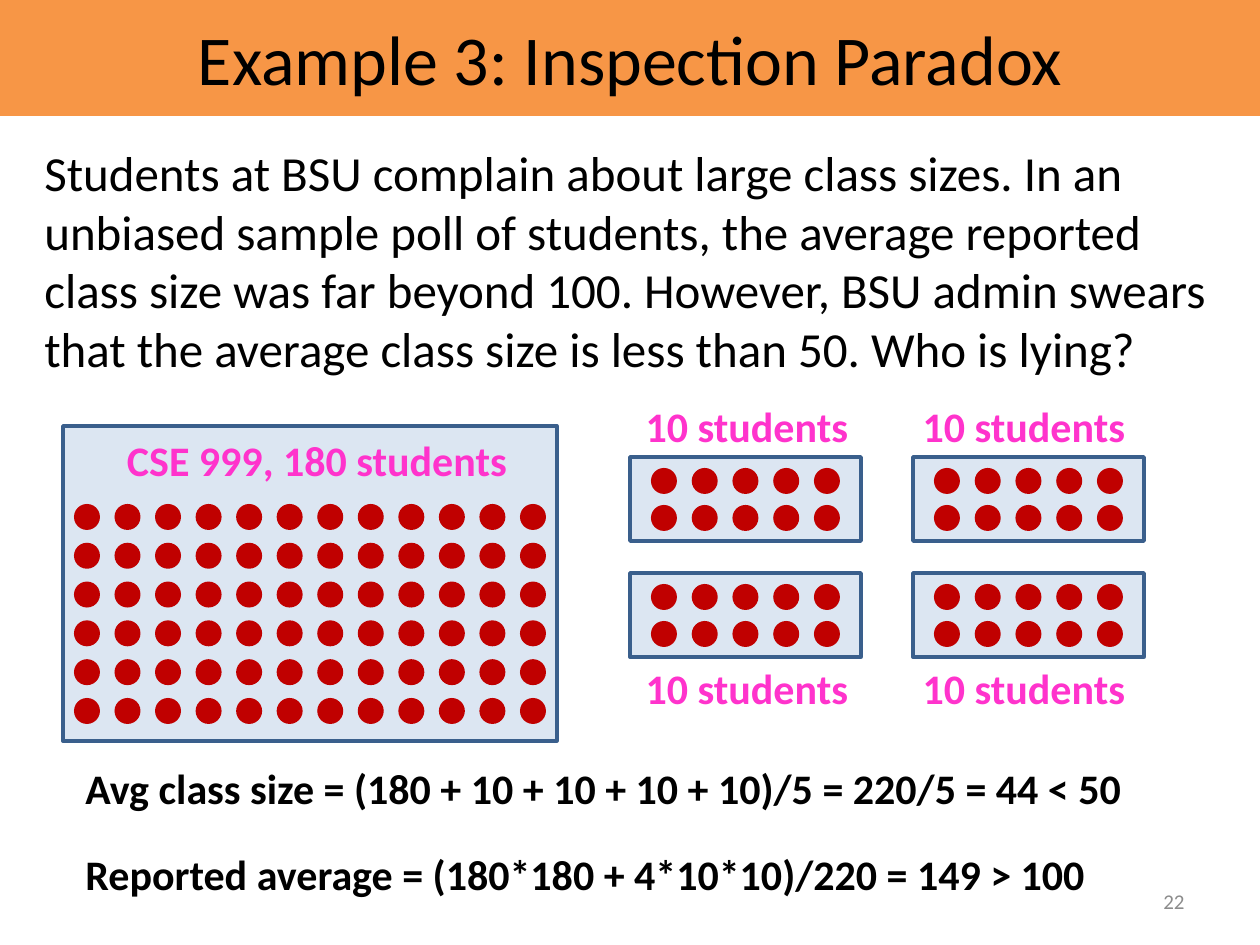
from dataclasses import dataclass

from pptx import Presentation, util as u
from pptx.dml.color import RGBColor
from pptx.enum import shapes, text

# Content: boxes are (left, top, width, height) in px
SLIDE_SIZE = (1260, 945)
TITLE = ("Example 3: Inspection Paradox", (0, 0, 1260, 116))
QUESTION = (
    "Students at BSU complain about large class sizes. In an unbiased sample "
    "poll of students, the average reported class size was far beyond 100. "
    "However, BSU admin swears that the average class size is less than 50. "
    "Who is lying?",
    (32, 136, 1197, 311),
)
LARGE_CLASS = ("CSE 999, 180 students", (63, 426, 494, 315), (107, 428, 420, 63))
SMALL_LABEL = "10 students"
SMALL_COLUMNS = [(630, 626), (913, 903)]  # room left, label left
SMALL_ROWS = [(457, 394), (573, 656)]  # room top, label top
SMALL_ROOM_SIZE = (231, 84)
SMALL_LABEL_SIZE = (242, 63)
ANSWERS = [
    ("Avg class size = (180 + 10 + 10 + 10 + 10)/5 = 220/5 = 44 < 50", (73, 756, 1092, 63)),
    ("Reported average = (180*180 + 4*10*10)/220 = 149 > 100", (73, 842, 1082, 63)),
]
PAGE_NUMBER = ("22", (903, 876, 294, 50))

# Dot grids: columns, rows, and insets from the room to the outer dot centres
LARGE_GRID = dict(columns=12, rows=6, side=24, top=91, bottom=30)
SMALL_GRID = dict(columns=5, rows=2, side=34, top=24, bottom=23)
DOT = 26


@dataclass(frozen=True)
class Theme:
    font: str = "Calibri"
    banner: str = "F79646"
    room: str = "DCE6F2"
    border: str = "3A5F8C"
    dot: str = "C00000"
    label: str = "FF33CC"
    ink: str = "000000"
    muted: str = "8C8C8C"
    title_size: int = 40
    body_size: int = 28
    label_size: int = 24
    number_size: int = 12
    border_width: int = 2


THEME = Theme()
ALIGN = text.PP_ALIGN
SHAPE = shapes.MSO_SHAPE


def px(value):
    return u.Emu(round(value * 914400 / 126))


def place(box):
    return [px(value) for value in box]


def add_filled(parent, kind, box, fill, border=None):
    shape = parent.shapes.add_shape(kind, *place(box))
    shape.shadow.inherit = False
    shape.fill.solid()
    shape.fill.fore_color.rgb = RGBColor.from_string(fill)
    if border:
        shape.line.color.rgb = RGBColor.from_string(border)
        shape.line.width = u.Pt(THEME.border_width)
    else:
        shape.line.fill.background()
    return shape


def write(shape, words, size, color, align=ALIGN.LEFT, bold=False, middle=False):
    frame = shape.text_frame
    frame.word_wrap = True
    frame.vertical_anchor = text.MSO_ANCHOR.MIDDLE if middle else text.MSO_ANCHOR.TOP
    frame.text = words
    paragraph = frame.paragraphs[0]
    paragraph.alignment = align
    font = paragraph.runs[0].font
    font.name, font.size, font.bold = THEME.font, u.Pt(size), bold
    font.color.rgb = RGBColor.from_string(color)
    return paragraph


def add_text(slide, words, box, *style, **options):
    return write(slide.shapes.add_textbox(*place(box)), words, *style, **options)


def add_label(slide, words, box):
    add_text(slide, words, box, THEME.label_size, THEME.label, ALIGN.CENTER, bold=True)


def add_room(slide, box, columns, rows, side, top, bottom):
    left, room_top, width, height = box
    group = slide.shapes.add_group_shape()
    add_filled(group, SHAPE.RECTANGLE, box, THEME.room, THEME.border)
    x_step = (width - 2 * side) / (columns - 1)
    y_step = (height - top - bottom) / (rows - 1)
    for row in range(rows):
        for column in range(columns):
            x = left + side + column * x_step - DOT / 2
            y = room_top + top + row * y_step - DOT / 2
            add_filled(group, SHAPE.OVAL, (x, y, DOT, DOT), THEME.dot)


def main():
    presentation = Presentation()
    presentation.slide_width, presentation.slide_height = place(SLIDE_SIZE)
    slide = presentation.slides.add_slide(presentation.slide_layouts[6])

    # Title banner, page number and question
    words, box = TITLE
    banner = add_filled(slide, SHAPE.RECTANGLE, box, THEME.banner)
    write(banner, words, THEME.title_size, THEME.ink, ALIGN.CENTER, middle=True)
    add_text(slide, *PAGE_NUMBER, THEME.number_size, THEME.muted, ALIGN.RIGHT, middle=True)
    question = add_text(slide, *QUESTION, THEME.body_size, THEME.ink)
    question.space_before, question.space_after = u.Pt(12), u.Pt(6)

    # Large class
    words, room, label = LARGE_CLASS
    add_room(slide, room, **LARGE_GRID)
    add_label(slide, words, label)

    # Small classes
    for room_left, label_left in SMALL_COLUMNS:
        for room_top, label_top in SMALL_ROWS:
            add_room(slide, (room_left, room_top, *SMALL_ROOM_SIZE), **SMALL_GRID)
            add_label(slide, SMALL_LABEL, (label_left, label_top, *SMALL_LABEL_SIZE))

    # Answers
    for words, box in ANSWERS:
        add_text(slide, words, box, THEME.label_size, THEME.ink, bold=True)

    presentation.save("out.pptx")


if __name__ == "__main__":
    main()
